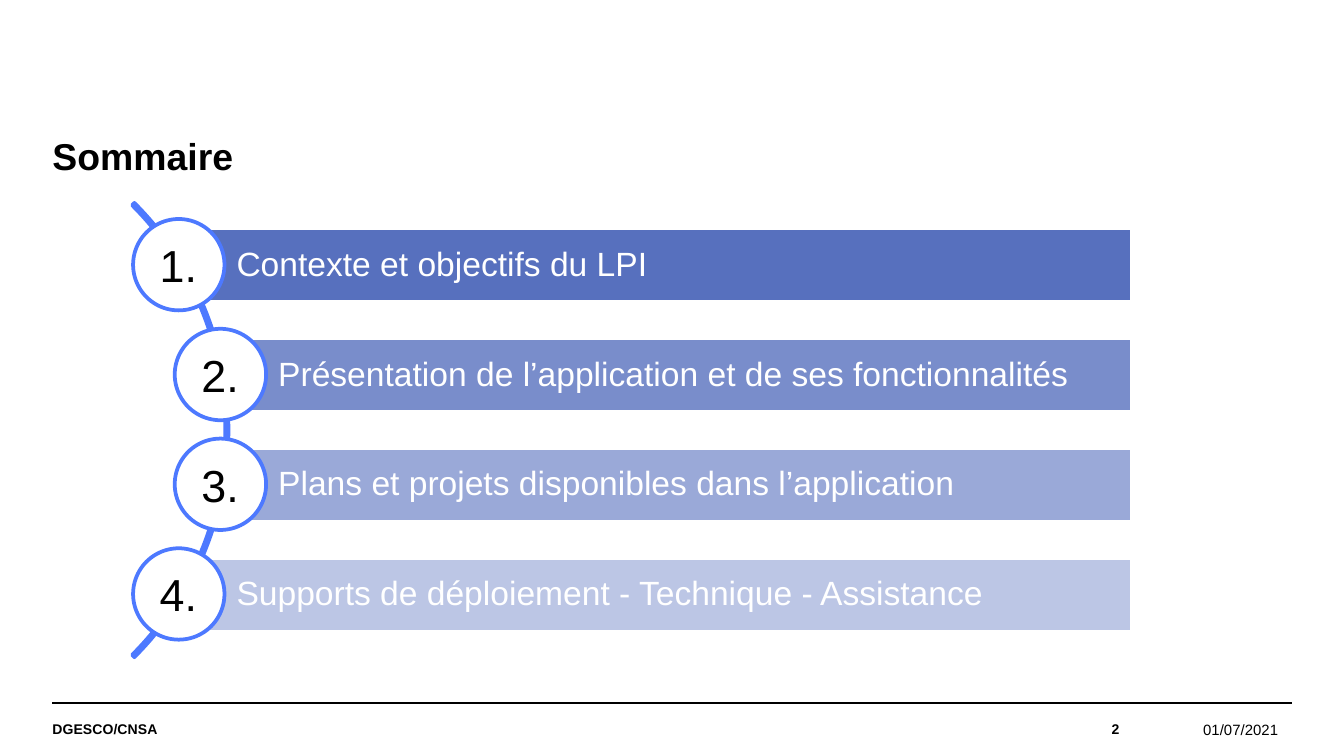
from lxml import etree
from pptx import Presentation
from pptx.dml.color import RGBColor
from pptx.enum.shapes import MSO_CONNECTOR, MSO_SHAPE
from pptx.enum.text import MSO_ANCHOR, MSO_AUTO_SIZE, PP_ALIGN
from pptx.oxml.ns import qn
from pptx.util import Inches, Pt

LEFT, RIGHT = PP_ALIGN.LEFT, PP_ALIGN.RIGHT
TOP, MIDDLE = MSO_ANCHOR.TOP, MSO_ANCHOR.MIDDLE
COLORS = {"black": "000000", "white": "FFFFFF", "accent": "4D79FF"}

# Label, bar colour, bar left, circle left
SECTIONS = [
    ("Contexte et objectifs du LPI", "5770BE", 1.33, 0.99),
    ("Présentation de l’application et de ses fonctionnalités", "798DCB", 1.64, 1.3),
    ("Plans et projets disponibles dans l’application", "9AA9D8", 1.64, 1.3),
    ("Supports de déploiement - Technique - Assistance", "BCC6E5", 1.33, 0.99),
]
FIRST_TOP, STEP = 1.7, 2.45 / 3
BAR_RIGHT, BAR_HEIGHT = 8.42, 0.55
CIRCLE_SIZE = 0.68


def add_shape(kind, left, top, width, height, fill, line):
    shape = slide.shapes.add_shape(
        kind, Inches(left), Inches(top), Inches(width), Inches(height))
    shape.shadow.inherit = False
    shape.fill.solid()
    shape.fill.fore_color.rgb = RGBColor.from_string(fill)
    shape.line.color.rgb = RGBColor.from_string(line)
    shape.line.width = Pt(2)
    return shape


def write(shape, text, size, color="black", bold=False, align=LEFT,
          anchor=MIDDLE, insets=(0, 0, 0, 0), wrap=True, spacing=None):
    """Fill a shape with one formatted line; insets run left, top, right, bottom."""
    frame = shape.text_frame
    frame.auto_size = MSO_AUTO_SIZE.NONE
    frame.word_wrap = wrap
    frame.vertical_anchor = anchor
    (frame.margin_left, frame.margin_top,
     frame.margin_right, frame.margin_bottom) = map(Inches, insets)
    paragraph = frame.paragraphs[0]
    paragraph.alignment = align
    paragraph.line_spacing = spacing
    run = paragraph.add_run()
    run.text = text
    run.font.name = "Arial"
    run.font.size = Pt(size)
    run.font.bold = bold
    run.font.color.rgb = RGBColor.from_string(COLORS[color])


presentation = Presentation()
presentation.slide_width = Inches(10)
presentation.slide_height = Inches(10 * 9 / 16)
slide = presentation.slides.add_slide(presentation.slide_layouts[5])

# Title
title = slide.shapes.title
title.left, title.top = Inches(0.39), Inches(1.03)
title.width, title.height = Inches(9.21), Inches(0.79)
write(title, "Sommaire", 20, bold=True, anchor=TOP, spacing=0.9)

# Arc that links the circles, from 315 to 45 degrees
arc = add_shape(MSO_SHAPE.BLOCK_ARC, -3.08, 0.81, 4.78, 4.78,
                COLORS["accent"], COLORS["accent"])
for index, value in enumerate((189, 27, 0.005)):
    arc.adjustments[index] = value

# Numbered sections
for index, (label, fill, bar_left, circle_left) in enumerate(SECTIONS):
    top = FIRST_TOP + index * STEP
    bar = add_shape(MSO_SHAPE.RECTANGLE, bar_left, top, BAR_RIGHT - bar_left,
                    BAR_HEIGHT, fill, COLORS["white"])
    write(bar, label, 18, "white", insets=(0.43, 0.05, 0.05, 0.05), spacing=0.9)
    add_shape(MSO_SHAPE.OVAL, circle_left, top - 0.07, CIRCLE_SIZE, CIRCLE_SIZE,
              COLORS["white"], COLORS["accent"])
    number = slide.shapes.add_textbox(Inches(circle_left + 0.1), Inches(top + 0.02),
                                      Inches(0.48), Inches(0.5))
    write(number, f"{index + 1}.", 24, anchor=TOP,
          insets=(0.1, 0.05, 0.1, 0.05), wrap=False)

# Footer
rule = slide.shapes.add_connector(MSO_CONNECTOR.STRAIGHT, Inches(0.39), Inches(5.23),
                                  Inches(9.61), Inches(5.23))
rule.line.color.rgb = RGBColor.from_string(COLORS["black"])
rule.line.width = Pt(0.8)
etree.SubElement(rule.element.spPr, qn("a:effectLst"))

for text, left, width, size, bold, align, inset in (
    ("DGESCO/CNSA", 0.39, 6.46, 7.5, True, LEFT, 0),
    ("2", 6.85, 1.48, 7.5, True, RIGHT, 0),
    ("01/07/2021", 8.33, 1.28, 8, False, RIGHT, 0.1),
):
    footer = slide.shapes.add_textbox(Inches(left), Inches(5.23),
                                      Inches(width), Inches(0.39))
    write(footer, text, size, bold=bold, align=align, insets=(inset, 0, inset, 0))

presentation.save("out.pptx")
